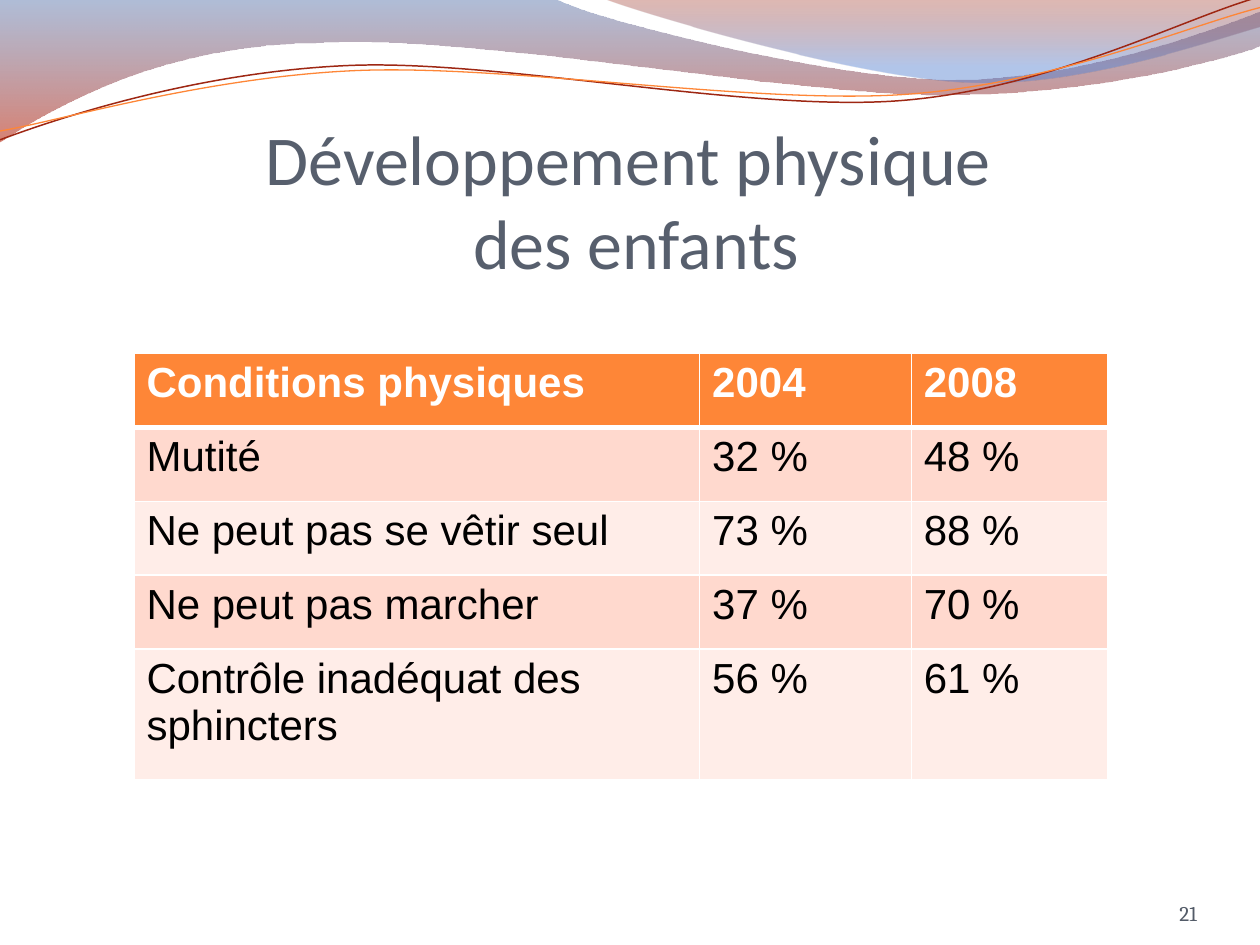
import math

import pptx
import pptx.dml.color
import pptx.enum.text
import pptx.oxml
import pptx.oxml.ns
import pptx.util

COLUMNS, ROWS = 100, 75
STRAND_TILT = -2.7
COLORS = {
    "white": "FFFFFF", "black": "000000", "title": "575F6D", "number": "535B68",
    "orange": "FE8637", "rust": "9E2713", "blue": "4F6EA8", "red": "B61A00",
    "maroon": "951500", "sky": "5681D1", "dark_band": "FFD9CE", "light_band": "FFEDE8",
}
ALIGN = pptx.enum.text.PP_ALIGN
ANCHOR = pptx.enum.text.MSO_ANCHOR
NAMESPACE = pptx.oxml.ns.nsdecls("a")


def rgb(name):
    return pptx.dml.color.RGBColor.from_string(COLORS[name])


def pairs(segment):
    return list(zip(segment[::2], segment[1::2]))


def turn(segment, center, degrees):
    """Rotate the points of a segment clockwise around the center."""
    cosine, sine = math.cos(math.radians(degrees)), math.sin(math.radians(degrees))
    turned = []
    for x, y in pairs(segment):
        across, down = x - center[0], y - center[1]
        turned += [center[0] + across * cosine - down * sine,
                   center[1] + across * sine + down * cosine]
    return tuple(turned)


class SlideBuilder:
    """Holds the style and the slide; lengths are grid columns and rows."""

    def __init__(self, presentation):
        self.column = presentation.slide_width / COLUMNS
        self.row = presentation.slide_height / ROWS
        self.slide = presentation.slides.add_slide(presentation.slide_layouts[5])

    def x(self, columns):
        return round(columns * self.column)

    def y(self, rows):
        return round(rows * self.row)

    def place(self, shape, left, top, width, height):
        shape.left, shape.top = self.x(left), self.y(top)
        shape.width, shape.height = self.x(width), self.y(height)

    def format_text(self, text_frame, size, font, color, align=ALIGN.LEFT, bold=False):
        for paragraph in text_frame.paragraphs:
            paragraph.alignment = align
            for run in paragraph.runs:
                run.font.size = pptx.util.Pt(size)
                run.font.name = font
                run.font.bold = bold
                run.font.color.rgb = rgb(color)

    def format_frame(self, text_frame, top_margin=0):
        text_frame.word_wrap = True
        text_frame.auto_size = pptx.enum.text.MSO_AUTO_SIZE.NONE
        text_frame.vertical_anchor = ANCHOR.BOTTOM
        text_frame.margin_left = text_frame.margin_right = text_frame.margin_bottom = 0
        text_frame.margin_top = self.y(top_margin)

    def outline(self, segments, close):
        """Draw from the first point; two numbers make a line, six a Bézier curve."""
        anchors = [(self.x(segment[-2]), self.y(segment[-1])) for segment in segments]
        builder = self.slide.shapes.build_freeform(*anchors[0])
        builder.add_line_segments(anchors[1:], close=close)
        shape = builder.convert_to_shape()
        shape.shadow.inherit = False
        lines = list(shape.element.iter(pptx.oxml.ns.qn("a:lnTo")))
        for line, segment in zip(lines, segments[1:]):
            if len(segment) == 6:
                points = "".join(
                    f'<a:pt x="{self.x(x) - shape.left}" y="{self.y(y) - shape.top}"/>'
                    for x, y in pairs(segment))
                curve = pptx.oxml.parse_xml(
                    f'<a:cubicBezTo {NAMESPACE}>{points}</a:cubicBezTo>')
                line.getparent().replace(line, curve)
        return shape

    def wave(self, segments, stops):
        """Closed shape with a downward gradient of (position, color, opacity %)."""
        shape = self.outline(segments, close=True)
        shape.line.fill.background()
        shape.fill.gradient()
        shape.fill.gradient_angle = 270
        for gradient_stop, (position, color, opacity) in zip(shape.fill.gradient_stops, stops):
            gradient_stop.position = position
            gradient_stop.color.rgb = rgb(color)
        colors = shape.element.spPr.iter(pptx.oxml.ns.qn("a:srgbClr"))
        for element, (position, color, opacity) in zip(colors, stops):
            element.append(pptx.oxml.parse_xml(
                f'<a:alpha {NAMESPACE} val="{opacity * 1000}"/>'))

    def strand(self, segments, center, color, width):
        """Open curve, laid level and then tilted as a shape."""
        level = [turn(segment, center, -STRAND_TILT) for segment in segments]
        shape = self.outline(level, close=False)
        shape.rotation = STRAND_TILT
        shape.fill.background()
        shape.line.color.rgb = rgb(color)
        shape.line.width = pptx.util.Pt(width)

    def title(self, text, box):
        title = self.slide.shapes.title
        title.element.getparent().append(title.element)
        self.place(title, *box)
        title.text_frame.text = text
        self.format_frame(title.text_frame, top_margin=0.5)
        self.format_text(title.text_frame, 40, "Calibri", "title", ALIGN.CENTER)

    def number(self, text, box):
        shape = self.slide.shapes.add_textbox(0, 0, 0, 0)
        self.place(shape, *box)
        shape.text_frame.text = text
        self.format_frame(shape.text_frame)
        self.format_text(shape.text_frame, 12, "Cambria", "number", ALIGN.RIGHT)

    def borders(self, cell, top, bottom):
        properties = cell._tc.get_or_add_tcPr()
        for side, width in (("L", 1), ("R", 1), ("T", top), ("B", bottom)):
            properties.append(pptx.oxml.parse_xml(
                f'<a:ln{side} {NAMESPACE} w="{pptx.util.Pt(width)}">'
                f'<a:solidFill><a:srgbClr val="{COLORS["white"]}"/></a:solidFill></a:ln{side}>'))

    def table(self, records, left, top, widths, heights):
        table = self.slide.shapes.add_table(
            len(heights), len(widths), self.x(left), self.y(top),
            self.x(sum(widths)), self.y(sum(heights))).table
        for column, width in zip(table.columns, widths):
            column.width = self.x(width)
        for index, (row, height, record) in enumerate(zip(table.rows, heights, records)):
            row.height = self.y(height)
            header = index == 0
            band = "orange" if header else "dark_band" if index % 2 else "light_band"
            for cell, text in zip(row.cells, record):
                cell.text_frame.text = text
                self.format_text(cell.text_frame, 24, "Arial",
                                 "white" if header else "black", bold=header)
                self.borders(cell, top=3 if index == 1 else 1, bottom=3 if header else 1)
                cell.fill.solid()
                cell.fill.fore_color.rgb = rgb(band)


def main():
    presentation = pptx.Presentation()
    presentation.slide_width = pptx.util.Inches(10)
    presentation.slide_height = pptx.util.Inches(7.5)
    builder = SlideBuilder(presentation)

    builder.wave([
        (0, -0.1), (44, -0.1), (47.6, 1.7, 66.4, 6.3, 75.8, 6.3),
        (85.3, 6.3, 95.8, 2.6, 100, 0.9), (100.1, 3.6),
        (98.3, 4.4, 87, 7.6, 74.6, 7.5), (62.2, 7.5, 38.2, 2.8, 25.7, 3.4),
        (12.9, 3.5, 4.6, 8.3, -0.1, 11.3),
    ], [(0, "blue", 45), (1, "red", 55)])
    builder.wave([
        (47.9, -0.1), (50.9, 1.1, 68.2, 6.2, 76.9, 6.5),
        (85.6, 6.9, 96.1, 3.2, 100, 2.1), (100, 0),
    ], [(0, "maroon", 30), (0.8, "sky", 45)])
    builder.strand([
        (0, 11.1), (4.8, 9.3, 15.8, 5.7, 27.7, 5.2),
        (39.5, 4.7, 59.3, 8.9, 71.3, 8), (83.3, 7.1, 93.8, 1.5, 99.8, -0.2),
    ], (49.9, 5.75), "rust", 0.85)
    builder.strand([
        (0, 10.4), (4.7, 9.6, 16.4, 6.1, 28.3, 5.6),
        (40.3, 5.1, 59.7, 8.3, 71.7, 7.5), (83.6, 6.7, 94.1, 2.1, 100, 0.6),
    ], (49.95, 5.9), "orange", 0.75)

    builder.title("Développement physique \vdes enfants", (5.5, 8.6, 90, 13.9))
    builder.table([
        ("Conditions physiques", "2004", "2008"),
        ("Mutité", "32 %", "48 %"),
        ("Ne peut pas se vêtir seul", "73 %", "88 %"),
        ("Ne peut pas marcher", "37 %", "70 %"),
        ("Contrôle inadéquat des sphincters", "56 %", "61 %"),
    ], 10.63, 28.05, widths=(44.9, 16.8, 15.6), heights=[5.87] * 4 + [10.4])
    builder.number("21", (86.7, 69.5, 8.3, 4))
    presentation.save("out.pptx")


if __name__ == "__main__":
    main()
